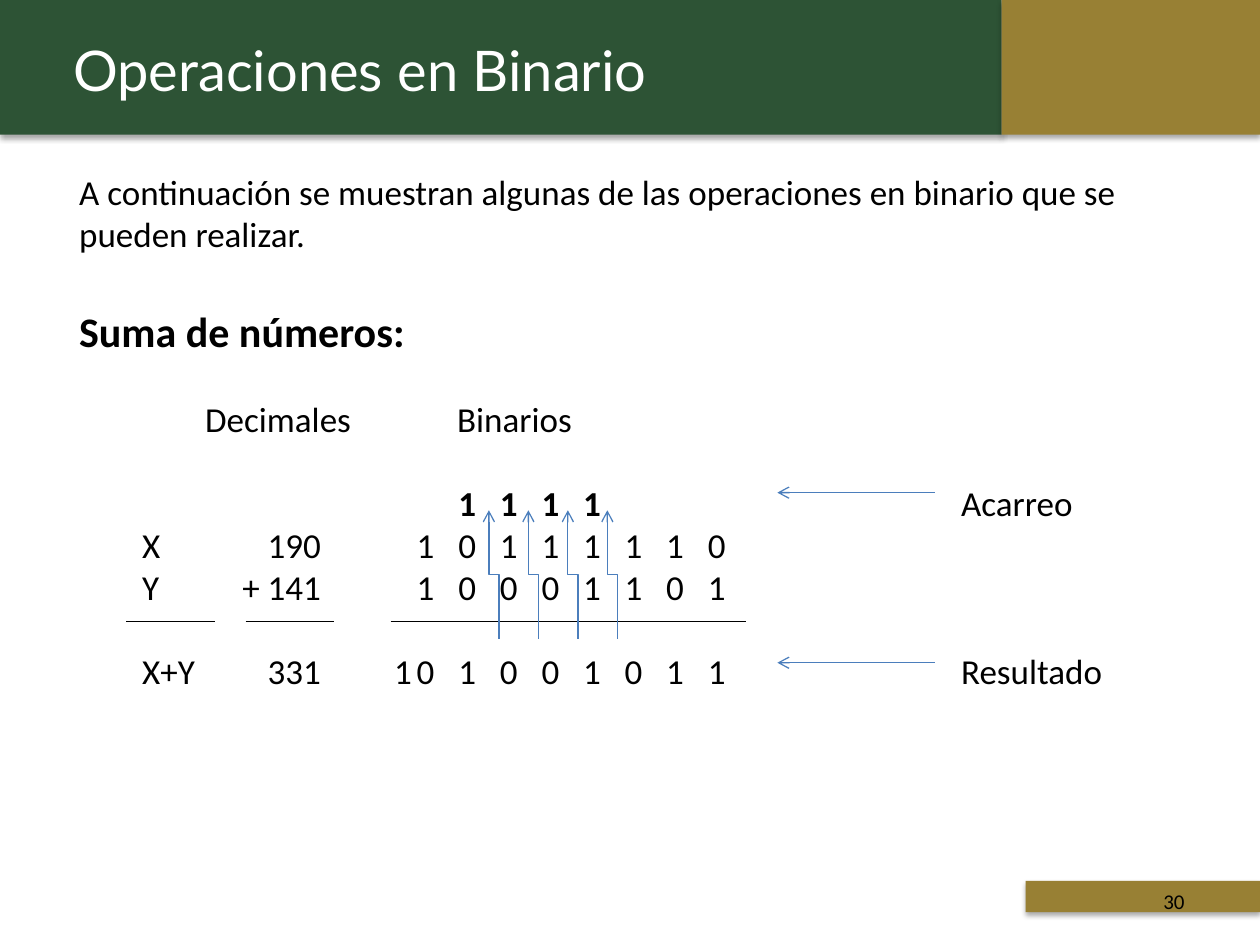
from dataclasses import dataclass

from lxml import etree
from pptx import Presentation
from pptx.dml.color import RGBColor
from pptx.enum.shapes import MSO_CONNECTOR, MSO_SHAPE
from pptx.enum.text import MSO_ANCHOR, MSO_AUTO_SIZE, PP_ALIGN
from pptx.oxml.ns import qn
from pptx.util import Inches, Pt

RECT = MSO_SHAPE.RECTANGLE
LINE, ELBOW = MSO_CONNECTOR.STRAIGHT, MSO_CONNECTOR.ELBOW
MIDDLE, FIXED = MSO_ANCHOR.MIDDLE, MSO_AUTO_SIZE.NONE
LEFT, RIGHT = PP_ALIGN.LEFT, PP_ALIGN.RIGHT


@dataclass(frozen=True)
class Theme:
    green: RGBColor = RGBColor(0x2D, 0x53, 0x35)
    gold: RGBColor = RGBColor(0x98, 0x80, 0x34)
    blue: RGBColor = RGBColor(0x4B, 0x7E, 0xBC)
    white: RGBColor = RGBColor(0xFF, 0xFF, 0xFF)
    black: RGBColor = RGBColor(0, 0, 0)
    head: str = "Lato"
    body: str = "Calibri"
    title: int = 32
    topic: int = 24
    text: int = 20
    page: int = 12
    rule: float = 0.75


THEME = Theme()
SPOTS = {"label": ("l", 0.5), "number": ("r", 1.92), "lead": ("ctr", 2.57),
         "decimal": ("l", 1), "binary": ("l", 3), "note": ("l", 7)}
BIT, STEP = 2.75, 0.33


def style(part, size, color, font, bold=False):
    for run in part.runs:
        run.font.size, run.font.bold = Pt(size), bold
        run.font.name, run.font.color.rgb = font, color


def add_band(slide, color, x, y, w, h):
    band = slide.shapes.add_shape(RECT, Inches(x), Inches(y), Inches(w), Inches(h))
    band.fill.solid()
    band.fill.fore_color.rgb = color
    band.line.fill.background()
    return band


def add_box(slide, x, y, w, h):
    box = slide.shapes.add_textbox(Inches(x), Inches(y), Inches(w), Inches(h))
    box.text_frame.word_wrap = True
    return box.text_frame


def add_line(slide, kind, color, start, end, arrow=False):
    line = slide.shapes.add_connector(kind, *map(Inches, start + end))
    line.line.color.rgb = color
    line.line.width = Pt(THEME.rule)
    props = line._element.spPr
    if arrow:
        etree.SubElement(props.find(qn("a:ln")), qn("a:tailEnd"), type="arrow")
    etree.SubElement(props, qn("a:effectLst"))
    return line


def add_head(slide, x, y, w, h):
    title = slide.shapes.title
    split = 7.95
    for color, left, wide in ((THEME.green, x, split), (THEME.gold, x + split, w - split)):
        title._element.addprevious(add_band(slide, color, left, y, wide, h)._element)
    title.left, title.top = Inches(x + 0.48), Inches(y + 0.01)
    title.width, title.height = Inches(6.68), Inches(h)
    frame = title.text_frame
    frame.text = "Operaciones en Binario"
    frame.vertical_anchor, frame.auto_size = MIDDLE, FIXED
    frame.paragraphs[0].alignment = LEFT
    style(frame.paragraphs[0], THEME.title, THEME.white, THEME.head)


def set_tabs(para, stops):
    tabs = etree.SubElement(para._p.get_or_add_pPr(), qn("a:tabLst"))
    for side, pos in stops:
        etree.SubElement(tabs, qn("a:tab"), pos=str(Inches(pos)), algn=side)


def add_row(frame, gap, cells, bits="", first=0, note="", bold=False):
    para = frame.add_paragraph()
    stops = [SPOTS[name] for name, _ in cells]
    stops += [("ctr", BIT + STEP * (first + i)) for i in range(len(bits))]
    words = [word for _, word in cells] + list(bits)
    para.text = "".join("\t" + word for word in words)
    style(para, THEME.text, THEME.black, THEME.body, bold)
    if note:
        stops.append(SPOTS["note"])
        run = para.add_run()
        run.text = "\t" + note
        run.font.size, run.font.name = Pt(THEME.text), THEME.body
        run.font.color.rgb = THEME.black
    set_tabs(para, stops)
    para.space_before = Pt(gap)


def add_body(slide, x, y, w, h):
    frame = add_box(slide, x, y, w, h)
    frame.text = ("A continuación se muestran algunas de las operaciones "
                  "en binario que se pueden realizar.\nSuma de números:")
    intro, topic = frame.paragraphs
    style(intro, THEME.text, THEME.black, THEME.body)
    style(topic, THEME.topic, THEME.black, THEME.body, True)
    topic.space_before = Pt(29.3)
    blank = 23.9
    add_row(frame, blank, [("decimal", "Decimales"), ("binary", "Binarios")])
    add_row(frame, blank, [], "1111", 1, "Acarreo", True)
    add_row(frame, 0, [("label", "X"), ("number", "190")], "10111110")
    add_row(frame, 0, [("label", "Y"), ("number", "+ 141")], "10001101")
    add_row(frame, blank, [("label", "X+Y"), ("number", "331"), ("lead", "1")],
            "01001011", note="Resultado")


def add_marks(slide, x, y):
    base = y + 1.02
    for left, wide in ((0, 0.71), (0.95, 0.7), (2.1, 2.82)):
        add_line(slide, LINE, THEME.black, (x + left, base), (x + left + wide, base))
    for top in (y, y + 1.35):
        add_line(slide, LINE, THEME.blue, (x + 6.42, top), (x + 5.17, top), True)
    rise, shift = 1.02, 0.08
    for i in range(4):
        mid, level = x + 2.92 + i * 0.94 / 3, y + 0.65
        carry = add_line(slide, ELBOW, THEME.blue, (mid - rise / 2, level + shift / 2),
                         (mid + rise / 2, level - shift / 2), True)
        carry._element.spPr.find(qn("a:xfrm")).set("rot", str(270 * 60000))


def add_foot(slide, x, y, w, h):
    add_band(slide, THEME.gold, x, y, w, h)
    frame = add_box(slide, x - 0.97, y - 0.04, 2.33, 0.4)
    frame.vertical_anchor = MIDDLE
    frame.text = "30"
    frame.paragraphs[0].alignment = RIGHT
    style(frame.paragraphs[0], THEME.page, THEME.black, THEME.body)


def main():
    deck = Presentation()
    deck.slide_width, deck.slide_height = Inches(10), Inches(7.5)
    slide = deck.slides.add_slide(deck.slide_layouts[5])
    add_head(slide, 0, 0, 10, 1.07)
    add_foot(slide, 8.14, 6.99, 1.86, 0.25)
    add_body(slide, 0.53, 1.3, 8.83, 4.68)
    add_marks(slide, 1, 3.91)
    deck.save("out.pptx")


if __name__ == "__main__":
    main()
